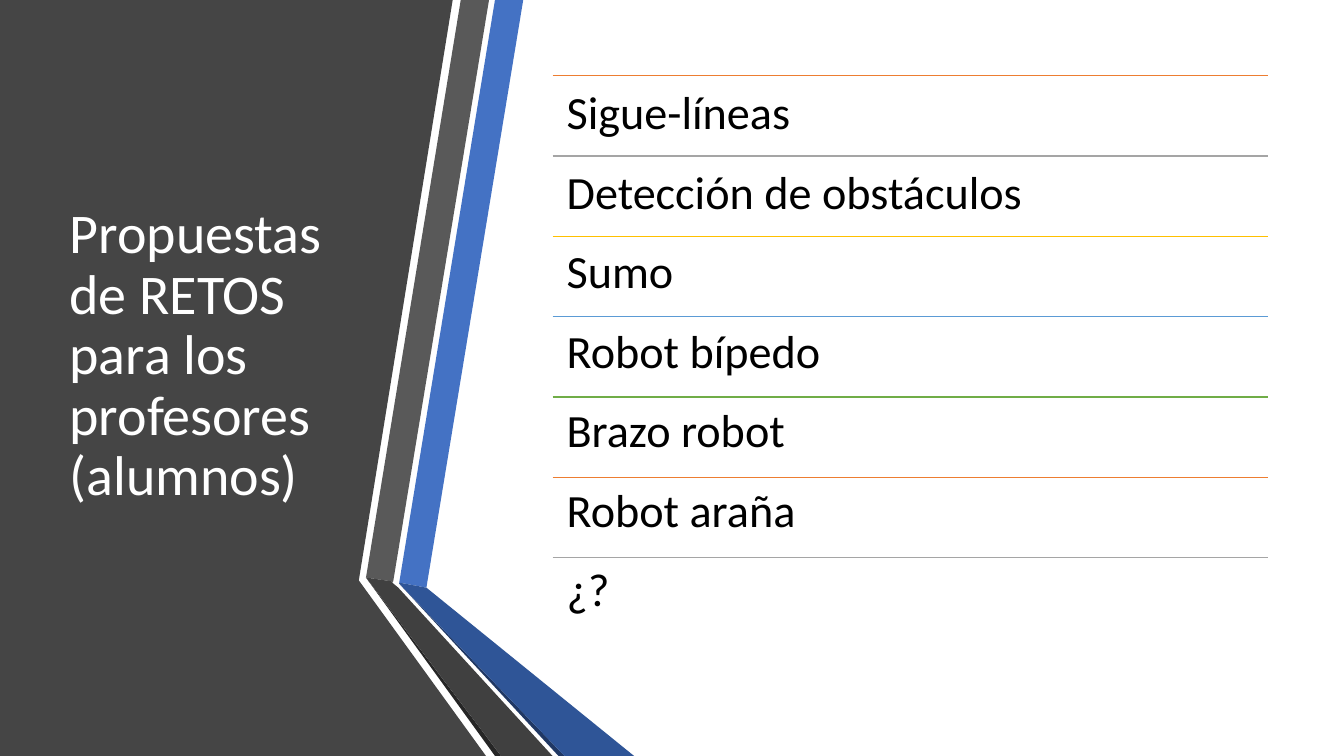
from dataclasses import dataclass

from lxml import etree
from pptx import Presentation
from pptx.dml.color import RGBColor
from pptx.enum.shapes import MSO_CONNECTOR
from pptx.enum.text import MSO_ANCHOR, MSO_AUTO_SIZE, PP_ALIGN
from pptx.oxml.ns import qn
from pptx.util import Inches, Pt

STRAIGHT = MSO_CONNECTOR.STRAIGHT
TOP, MIDDLE = MSO_ANCHOR.TOP, MSO_ANCHOR.MIDDLE
LEFT = PP_ALIGN.LEFT
NO_AUTOFIT = MSO_AUTO_SIZE.NONE


@dataclass(frozen=True)
class Theme:
    font: str = "Calibri"
    title_size: int = 40
    list_size: int = 33
    title_color: str = "FFFFFF"
    list_color: str = "000000"
    panel: str = "454545"
    blue: str = "4472C4"
    blue_fold: str = "2F5597"
    blue_shadow: str = "203864"
    gray: str = "595959"
    gray_fold: str = "404040"
    gray_shadow: str = "262626"
    rules: tuple = ("ED7D31", "A5A5A5", "FFC000", "5B9BD5", "70AD47")


THEME = Theme()

TITLE = "Propuestas de RETOS para los profesores (alumnos)"
CHALLENGES = ["Sigue-líneas", "Detección de obstáculos", "Sumo", "Robot bípedo",
              "Brazo robot", "Robot araña", "¿?"]

# List geometry in inches
LIST_LEFT, LIST_TOP, LIST_WIDTH = 5.48, 0.75, 7.1
ROW_HEIGHT = 5.58 / len(CHALLENGES)
LIST_INSET = 0.14
LINE_SPACING = 0.9
FONT_LINE_HEIGHT = 1.22  # natural line height of the font, in ems

PANEL = [(3.53, 0), (4.49, 0), (3.56, 5.75), (3.56, 5.76), (4.82, 7.5), (0, 7.5), (0, 0)]
RIBBONS = [
    (THEME.blue, [(3.96, 5.78), (4.23, 5.83), (5.19, 0), (4.91, 0)]),
    (THEME.gray, [(4.85, 0), (4.57, 0), (3.63, 5.73), (3.9, 5.77)]),
    (THEME.gray_shadow, [(3.63, 5.73), (4.91, 7.5), (4.97, 7.5)]),
    (THEME.blue_shadow, [(3.96, 5.79), (5.54, 7.5), (5.6, 7.5)]),
    (THEME.blue_fold, [(3.96, 5.79), (5.6, 7.5), (6.29, 7.5), (4.23, 5.83), (3.96, 5.78)]),
    (THEME.gray_fold, [(5.48, 7.5), (3.95, 5.83), (3.89, 5.78), (3.9, 5.77),
                       (3.63, 5.73), (4.97, 7.5)]),
]


def add_polygon(shapes, points, color):
    corners = [(Inches(x), Inches(y)) for x, y in points]
    builder = shapes.build_freeform(*corners[0])
    builder.add_line_segments(corners[1:], close=True)
    shape = builder.convert_to_shape()
    shape.shadow.inherit = False
    shape.fill.solid()
    shape.fill.fore_color.rgb = RGBColor.from_string(color)
    shape.line.fill.background()


def add_rule(shapes, y, color):
    left, right = Inches(LIST_LEFT), Inches(LIST_LEFT + LIST_WIDTH)
    rule = shapes.add_connector(STRAIGHT, left, Inches(y), right, Inches(y))
    rule.line.color.rgb = RGBColor.from_string(color)
    rule.line.width = Pt(1)
    etree.SubElement(rule.element.spPr, qn("a:effectLst"))


def place(shape, left, top, width, height):
    shape.left, shape.top = Inches(left), Inches(top)
    shape.width, shape.height = Inches(width), Inches(height)


def bring_to_front(shape):
    shape.element.getparent().append(shape.element)


def prepare_frame(shape, anchor):
    frame = shape.text_frame
    frame.word_wrap = True
    frame.auto_size = NO_AUTOFIT
    frame.vertical_anchor = anchor
    return frame


def write_paragraph(paragraph, text, size, color):
    paragraph.alignment = LEFT
    paragraph.line_spacing = LINE_SPACING
    paragraph.space_before = Pt(0)
    run = paragraph.add_run()
    run.text = text
    run.font.name = THEME.font
    run.font.size = Pt(size)
    run.font.color.rgb = RGBColor.from_string(color)


def remove_bullet(paragraph):
    properties = paragraph._p.get_or_add_pPr()
    properties.set("marL", "0")
    properties.set("indent", "0")
    etree.SubElement(properties, qn("a:buNone"))


def fill_title(title):
    place(title, 0.59, 0.75, 3.04, 5.58)
    frame = prepare_frame(title, MIDDLE)
    write_paragraph(frame.paragraphs[0], TITLE, THEME.title_size, THEME.title_color)
    bring_to_front(title)


def fill_list(body):
    place(body, LIST_LEFT, LIST_TOP, LIST_WIDTH, ROW_HEIGHT * len(CHALLENGES))
    frame = prepare_frame(body, TOP)
    frame.margin_left = frame.margin_right = Inches(LIST_INSET)
    frame.margin_top = frame.margin_bottom = Inches(LIST_INSET)
    # The gap brings each line of text up to the height of one row
    line_height = THEME.list_size * FONT_LINE_HEIGHT * LINE_SPACING
    gap = Pt(Inches(ROW_HEIGHT).pt - line_height)
    for index, challenge in enumerate(CHALLENGES):
        paragraph = frame.add_paragraph() if index else frame.paragraphs[0]
        write_paragraph(paragraph, challenge, THEME.list_size, THEME.list_color)
        paragraph.space_after = gap
        remove_bullet(paragraph)
    bring_to_front(body)


def main():
    presentation = Presentation()
    presentation.slide_width, presentation.slide_height = Inches(13.33), Inches(7.5)
    slide = presentation.slides.add_slide(presentation.slide_layouts[1])
    title, body = slide.placeholders

    # Dark panel and folded ribbons
    add_polygon(slide.shapes, PANEL, THEME.panel)
    ribbons = slide.shapes.add_group_shape()
    for color, points in RIBBONS:
        add_polygon(ribbons.shapes, points, color)

    # Title, then one coloured rule above each challenge
    fill_title(title)
    for index in range(len(CHALLENGES)):
        color = THEME.rules[index % len(THEME.rules)]
        add_rule(slide.shapes, LIST_TOP + index * ROW_HEIGHT, color)
    fill_list(body)

    presentation.save("out.pptx")


if __name__ == "__main__":
    main()
